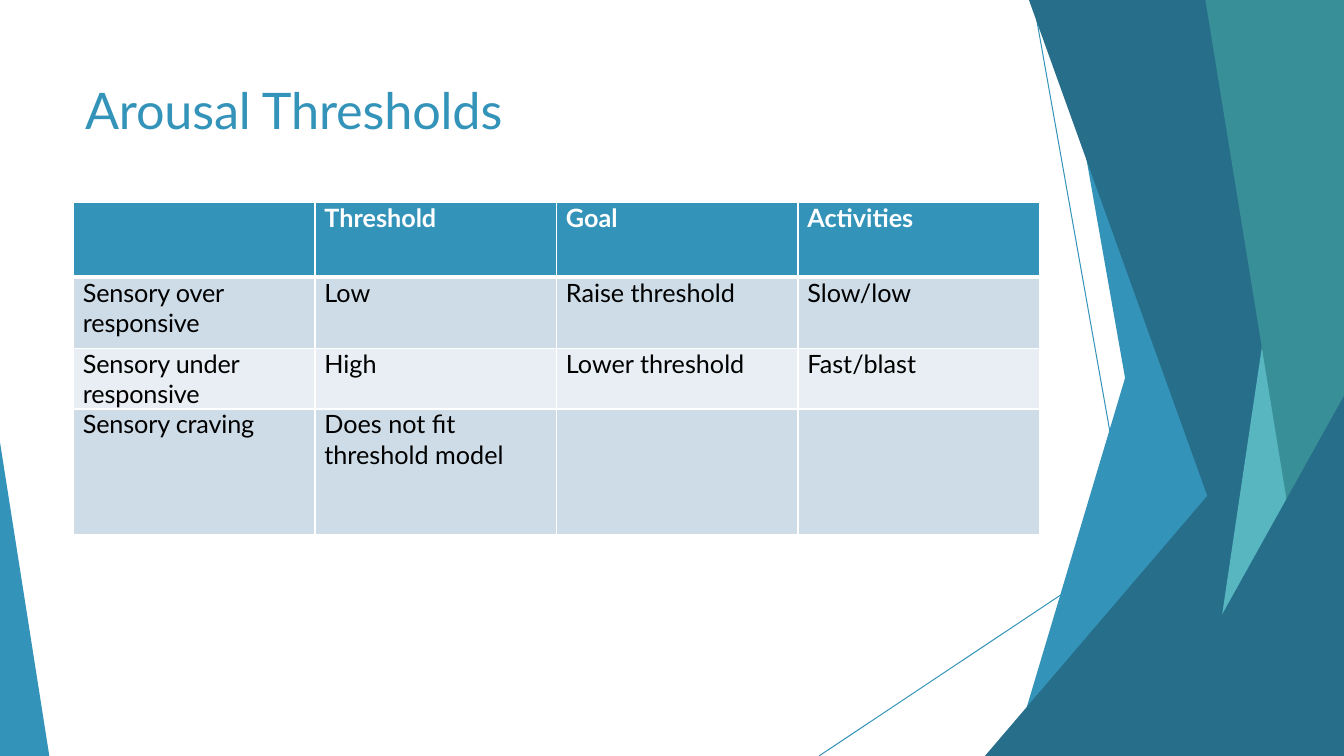
from dataclasses import dataclass

from lxml.etree import SubElement
from pptx import Presentation
from pptx.dml.color import RGBColor
from pptx.enum.shapes import MSO_CONNECTOR
from pptx.oxml.ns import qn
from pptx.slide import Slide
from pptx.table import _Cell
from pptx.text.text import _Paragraph
from pptx.util import Emu, Pt

EMU_PER_PX = 9525
PAGE_WIDTH, PAGE_HEIGHT = 1280, 720
FONT = "Lato"

WHITE = RGBColor(0xFF, 0xFF, 0xFF)
BLACK = RGBColor(0x00, 0x00, 0x00)
BLUE = RGBColor(0x34, 0x93, 0xB9)
DARK_BLUE = RGBColor(0x27, 0x6E, 0x8A)
AQUA = RGBColor(0x57, 0xB6, 0xC0)
TEAL = RGBColor(0x39, 0x8F, 0x97)
BAND_DARK = RGBColor(0xCD, 0xDC, 0xE7)
BAND_LIGHT = RGBColor(0xE8, 0xEE, 0xF3)

Point = tuple[int, int]


@dataclass(frozen=True)
class Facet:
    points: tuple[Point, ...]
    color: RGBColor


@dataclass(frozen=True)
class TableRow:
    height: int
    fill: RGBColor
    texts: tuple[str, ...]


TOP_RIGHT: Point = (PAGE_WIDTH, 0)
BOTTOM_RIGHT: Point = (PAGE_WIDTH, PAGE_HEIGHT)


def edge_facet(top: Point, bottom_x: int, color: RGBColor) -> Facet:
    """Facet between a slanted left edge and the right side of the page."""
    corner = (PAGE_WIDTH, top[1])
    points = (corner, top, (bottom_x, PAGE_HEIGHT), BOTTOM_RIGHT)
    return Facet(points, color)


def peak_facet(peak_y: int, bottom_x: int) -> Facet:
    """Dark triangle that rises to the right side of the page."""
    points = ((PAGE_WIDTH, peak_y), (bottom_x, PAGE_HEIGHT), BOTTOM_RIGHT)
    return Facet(points, DARK_BLUE)


HAIRLINES: list[tuple[Point, Point]] = [
    ((984, 0), (1112, PAGE_HEIGHT)),
    ((PAGE_WIDTH, 387), (780, PAGE_HEIGHT)),
]

FACETS = [
    edge_facet((1179, 0), 964, BLUE),
    edge_facet((1008, 0), 1135, BLUE),
    peak_facet(320, 938),
    edge_facet((980, 0), 1239, DARK_BLUE),
    edge_facet((1251, 0), 1144, AQUA),
    edge_facet((1148, 0), 1265, TEAL),
    peak_facet(377, 1089),
    Facet(((0, 421), (0, PAGE_HEIGHT), (47, PAGE_HEIGHT)), BLUE),
]

COLUMN_WIDTH = 230
TABLE_ROWS = [
    TableRow(71, BLUE, ("", "Threshold", "Goal", "Activities")),
    TableRow(68, BAND_DARK, ("Sensory over responsive", "Low", "Raise threshold", "Slow/low")),
    TableRow(57, BAND_LIGHT, ("Sensory under responsive", "High", "Lower threshold", "Fast/blast")),
    TableRow(120, BAND_DARK, ("Sensory craving", "Does not fit threshold model", "", "")),
]


def px(length: int) -> Emu:
    return Emu(length * EMU_PER_PX)


def add_span(para: _Paragraph, text: str, size: int, color: RGBColor,
             bold: bool = False, tracking: int = 0) -> None:
    """Add one run; tracking is in hundredths of a point."""
    span = para.add_run()
    span.text = text
    span.font.name = FONT
    span.font.size = Pt(size)
    span.font.bold = bold
    span.font.color.rgb = color
    if tracking:
        span.font._element.set("spc", str(tracking))


def draw_hairline(page: Slide, start: Point, end: Point) -> None:
    line = page.shapes.add_connector(
        MSO_CONNECTOR.STRAIGHT, *map(px, start), *map(px, end))
    line.line.color.rgb = BLUE
    line.line.width = Pt(0.72)
    SubElement(line._element.spPr, qn("a:effectLst"))


def draw_facet(page: Slide, facet: Facet) -> None:
    first, *others = facet.points
    builder = page.shapes.build_freeform(*first, scale=EMU_PER_PX)
    builder.add_line_segments(others, close=True)
    shape = builder.convert_to_shape()
    shape.shadow.inherit = False
    shape.fill.solid()
    shape.fill.fore_color.rgb = facet.color
    shape.line.fill.background()


def draw_title(page: Slide, text: str) -> None:
    box = page.shapes.add_textbox(px(46), px(64), px(1188), px(69))
    frame = box.text_frame
    frame.word_wrap = True
    frame.margin_left = px(35)
    frame.margin_top = px(11)
    frame.margin_right = frame.margin_bottom = 0
    add_span(frame.paragraphs[0], text, 36, BLUE, tracking=-10)


def set_borders(cell: _Cell, top: int, bottom: int) -> None:
    properties = cell._tc.get_or_add_tcPr()
    for side, points in (("L", 1), ("R", 1), ("T", top), ("B", bottom)):
        border = SubElement(properties, qn(f"a:ln{side}"), w=str(Pt(points)))
        fill = SubElement(border, qn("a:solidFill"))
        SubElement(fill, qn("a:srgbClr"), val=str(WHITE))


def draw_table(page: Slide, rows: list[TableRow]) -> None:
    columns = len(rows[0].texts)
    table = page.shapes.add_table(
        len(rows), columns, px(70), px(193),
        px(columns * COLUMN_WIDTH), px(sum(row.height for row in rows))).table
    for column in table.columns:
        column.width = px(COLUMN_WIDTH)

    for row_index, row in enumerate(rows):
        table.rows[row_index].height = px(row.height)
        header = row_index == 0
        for column_index, text in enumerate(row.texts):
            cell = table.cell(row_index, column_index)
            cell.margin_left = px(9)
            cell.margin_top = cell.margin_right = cell.margin_bottom = 0
            # The rule below the header is heavier
            set_borders(cell, top=3 if row_index == 1 else 1, bottom=3 if header else 1)
            cell.fill.solid()
            cell.fill.fore_color.rgb = row.fill
            if text:
                add_span(cell.text_frame.paragraphs[0], text, 18,
                         WHITE if header else BLACK, bold=header,
                         tracking=-10 if column_index == 0 else 0)


def main() -> None:
    deck = Presentation()
    deck.slide_width, deck.slide_height = px(PAGE_WIDTH), px(PAGE_HEIGHT)
    page = deck.slides.add_slide(deck.slide_layouts[6])

    # Background decoration
    for start, end in HAIRLINES:
        draw_hairline(page, start, end)
    for facet in FACETS:
        draw_facet(page, facet)

    # Content
    draw_title(page, "Arousal Thresholds")
    draw_table(page, TABLE_ROWS)

    deck.save("out.pptx")


if __name__ == "__main__":
    main()
